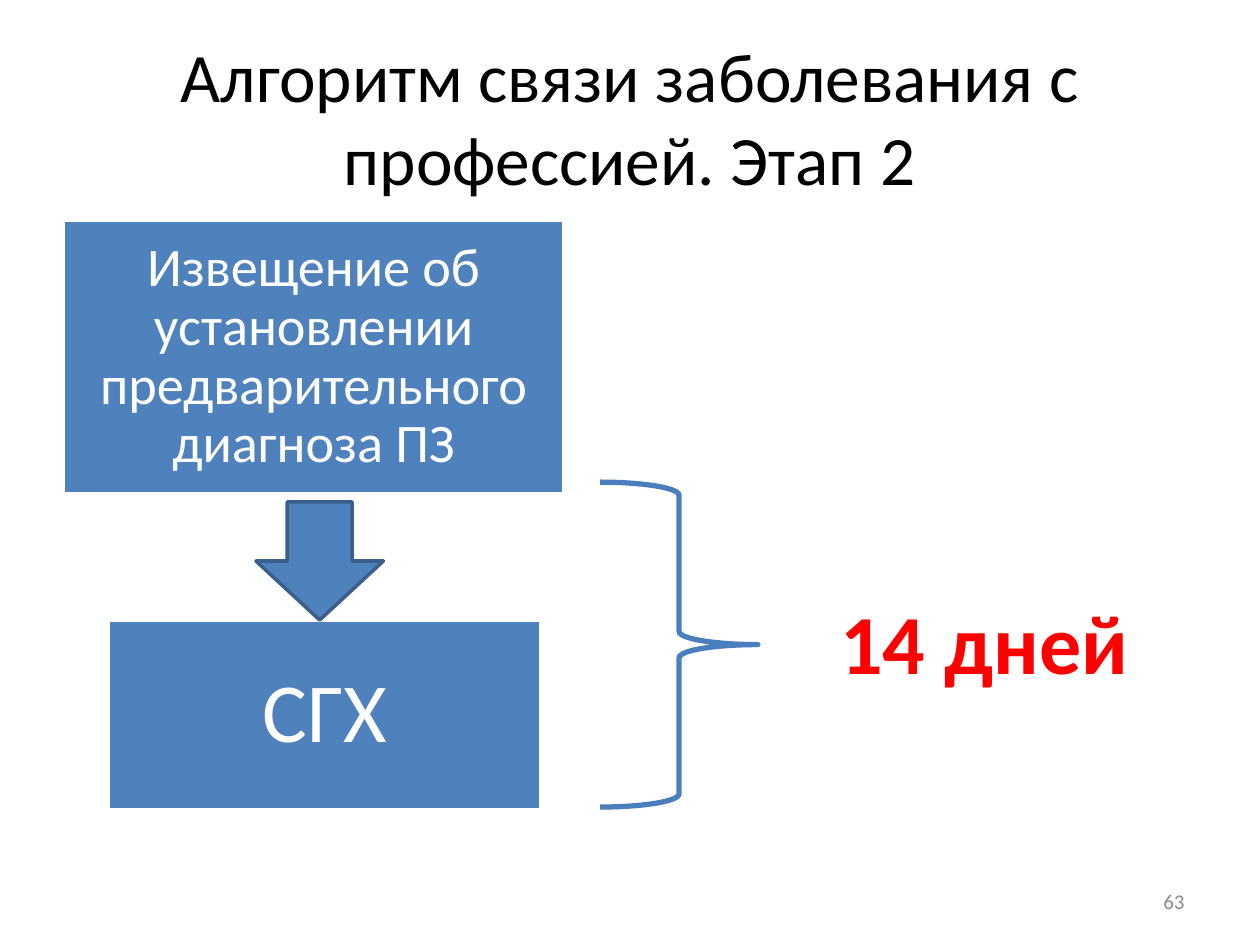
from pptx import Presentation
from pptx.dml.color import RGBColor
from pptx.enum.shapes import MSO_SHAPE
from pptx.enum.text import MSO_ANCHOR, PP_ALIGN
from pptx.util import Cm, Pt


def color(code):
    return RGBColor.from_string(code)


def write(shape, text, size, code, align=PP_ALIGN.CENTER, bold=False,
          anchor=MSO_ANCHOR.MIDDLE, inset=None, spacing=None):
    frame = shape.text_frame
    frame.word_wrap = True
    frame.vertical_anchor = anchor
    if inset is not None:
        for side in ("left", "right", "top", "bottom"):
            setattr(frame, f"margin_{side}", Cm(inset))
    para = frame.paragraphs[0]
    para.alignment = align
    if spacing:
        para.line_spacing = spacing
    span = para.add_run()
    span.text = text
    formats = {"name": "Calibri", "size": Pt(size), "bold": bold}
    for name, value in formats.items():
        setattr(span.font, name, value)
    span.font.color.rgb = color(code)


deck = Presentation()
deck.slide_width, deck.slide_height = Cm(25.4), Cm(19.05)
page = deck.slides.add_slide(deck.slide_layouts[5])

# Title
title = page.shapes.title
place = {"left": 1.27, "top": 0.76, "width": 22.86, "height": 3.18}
for name, value in place.items():
    setattr(title, name, Cm(value))
write(title, "Алгоритм связи заболевания с профессией. Этап 2", 39.6, "000000")

# Steps, arrow between them and brace: kind, place, fill, line, line width
shapes = {
    "result": (MSO_SHAPE.RECTANGLE, (2.18, 12.5, 8.73, 3.82), "4F81BD", "FFFFFF", 2),
    "notice": (MSO_SHAPE.RECTANGLE, (1.27, 4.45, 10.1, 5.51), "4F81BD", "FFFFFF", 2),
    "arrow": (MSO_SHAPE.DOWN_ARROW, (5.16, 10.12, 2.57, 2.38), "4F81BD", "3A5F8C", 2),
    "brace": (MSO_SHAPE.RIGHT_BRACE, (12.1, 9.72, 3.18, 6.55), None, "4B7EBC", 3),
}
drawn = {}
for name, (kind, place, fill, line, width) in shapes.items():
    shape = page.shapes.add_shape(kind, *map(Cm, place))
    shape.shadow.inherit = False
    if fill:
        shape.fill.solid()
        shape.fill.fore_color.rgb = color(fill)
    else:
        shape.fill.background()
    shape.line.color.rgb = color(line)
    shape.line.width = Pt(width)
    drawn[name] = shape
drawn["arrow"].adjustments[0] = 0.51

write(drawn["result"], "СГХ", 48, "FFFFFF", inset=0.51, spacing=0.9)
write(drawn["notice"], "Извещение об установлении предварительного диагноза ПЗ",
      31, "FFFFFF", inset=0.33, spacing=0.9)

# Deadline
deadline = page.shapes.add_textbox(Cm(14.88), Cm(11.79), Cm(9.93), Cm(2.31))
write(deadline, "14 дней", 48, "FF0000", bold=True, anchor=MSO_ANCHOR.TOP)

# Page number
number = page.shapes.add_textbox(Cm(18.21), Cm(17.65), Cm(5.92), Cm(1.02))
write(number, "63", 12, "8C8C8C", align=PP_ALIGN.RIGHT)

deck.save("out.pptx")
